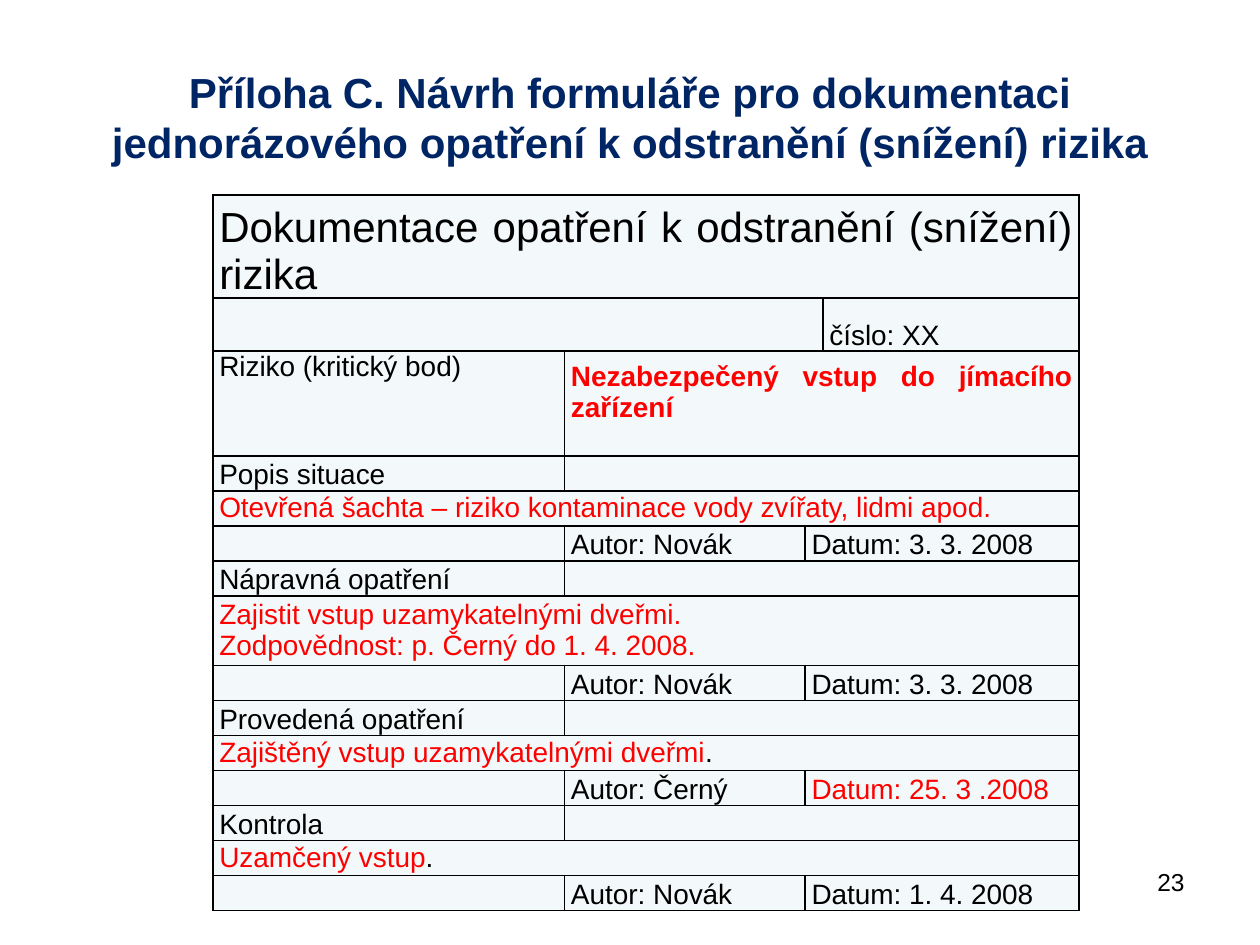
import pptx
import pptx.util
import pptx.dml.color
import pptx.enum.text
from lxml import etree
from pptx.oxml.ns import qn

Cm, Pt = pptx.util.Cm, pptx.util.Pt
RGBColor = pptx.dml.color.RGBColor
ALIGN = pptx.enum.text.PP_ALIGN
ANCHOR = pptx.enum.text.MSO_ANCHOR

NAVY = RGBColor(0x00, 0x25, 0x65)
BLACK = RGBColor(0x00, 0x00, 0x00)
RED = RGBColor(0xFF, 0x00, 0x00)
PALE = RGBColor(0xF3, 0xF9, 0xFA)
FONT = "Arial"

COL_WIDTHS = [7.09, 4.85, 0.3, 5.16]
LINE_HEIGHT = 0.705
ROW_HEIGHTS = [2.08, 1.07, 2.11] + [LINE_HEIGHT] * 4 + [1.41] + [LINE_HEIGHT] * 7


def add_run(p, text, size, color=BLACK, bold=False):
    r = p.add_run()
    r.text = text
    r.font.name = FONT
    r.font.size = Pt(size)
    r.font.bold = bold
    r.font.color.rgb = color


def add_title(sld, text):
    sp = sld.shapes.title
    sp.left, sp.top, sp.width, sp.height = Cm(1.27), Cm(0.76), Cm(22.86), Cm(3.18)
    tf = sp.text_frame
    tf.word_wrap = True
    tf.vertical_anchor = ANCHOR.MIDDLE
    p = tf.paragraphs[0]
    p.alignment = ALIGN.CENTER
    add_run(p, text, 24, NAVY, True)


def add_page_number(sld, text):
    tf = sld.shapes.add_textbox(Cm(18.21), Cm(17.35), Cm(5.92), Cm(1.32)).text_frame
    tf.word_wrap = True
    p = tf.paragraphs[0]
    p.alignment = ALIGN.RIGHT
    add_run(p, text, 14)


def format_cell(cell):
    """Thin black borders, pale fill and tight margins."""
    tc_pr = cell._tc.get_or_add_tcPr()
    for side in ("lnL", "lnR", "lnT", "lnB"):
        ln = etree.SubElement(tc_pr, qn("a:" + side), w=str(Pt(1)))
        fill = etree.SubElement(ln, qn("a:solidFill"))
        etree.SubElement(fill, qn("a:srgbClr"), val=str(BLACK))
    cell.fill.solid()
    cell.fill.fore_color.rgb = PALE
    cell.margin_left = cell.margin_right = Cm(0.13)
    cell.margin_top = cell.margin_bottom = 0


def write_cell(cell, lines, size=16, anchor=ANCHOR.BOTTOM):
    """Each line is a list of (text, color, bold) runs."""
    cell.vertical_anchor = anchor
    tf = cell.text_frame
    for i, runs in enumerate(lines):
        p = tf.add_paragraph() if i else tf.paragraphs[0]
        p.alignment = ALIGN.JUSTIFY
        for run in runs:
            add_run(p, run[0], size, *run[1:])


def write_section(tbl, row, label, note, author, date, date_color=BLACK):
    """Three rows: heading, note across the table, signature."""
    tbl.cell(row, 1).merge(tbl.cell(row, 3))
    write_cell(tbl.cell(row, 0), [[(label,)]])

    tbl.cell(row + 1, 0).merge(tbl.cell(row + 1, 3))
    write_cell(tbl.cell(row + 1, 0), note, anchor=ANCHOR.MIDDLE)

    tbl.cell(row + 2, 2).merge(tbl.cell(row + 2, 3))
    write_cell(tbl.cell(row + 2, 1), [[("Autor: " + author,)]])
    write_cell(tbl.cell(row + 2, 2), [[("Datum: " + date, date_color)]])


def add_form(sld):
    gf = sld.shapes.add_table(len(ROW_HEIGHTS), len(COL_WIDTHS), Cm(4.29), Cm(3.93),
                              Cm(sum(COL_WIDTHS)), Cm(sum(ROW_HEIGHTS)))
    tbl = gf.table
    for col, width in zip(tbl.columns, COL_WIDTHS):
        col.width = Cm(width)
    for row, height in zip(tbl.rows, ROW_HEIGHTS):
        row.height = Cm(height)
    for cell in tbl.iter_cells():
        format_cell(cell)

    # Form heading and number
    tbl.cell(0, 0).merge(tbl.cell(0, 3))
    write_cell(tbl.cell(0, 0), [[("Dokumentace opatření k odstranění (snížení) rizika",)]], 24)
    tbl.cell(1, 0).merge(tbl.cell(1, 2))
    write_cell(tbl.cell(1, 3), [[("číslo: XX",)]])

    # Risk, raised one line above the bottom of its row
    tbl.cell(2, 1).merge(tbl.cell(2, 3))
    write_cell(tbl.cell(2, 0), [[("Riziko (kritický bod)",)]], anchor=ANCHOR.TOP)
    risk = tbl.cell(2, 1)
    risk.margin_bottom = Cm(0.65)
    write_cell(risk, [[("Nezabezpečený vstup do jímacího zařízení", RED, True)]])

    # Sections of the form
    sections = [
        ("Popis situace",
         [[("Otevřená šachta – riziko kontaminace vody zvířaty, lidmi apod.", RED)]],
         "Novák", "3. 3. 2008"),
        ("Nápravná opatření",
         [[("Zajistit vstup uzamykatelnými dveřmi.", RED)],
          [("Zodpovědnost: p. Černý do 1. 4. 2008.", RED)]],
         "Novák", "3. 3. 2008"),
        ("Provedená opatření",
         [[("Zajištěný vstup uzamykatelnými dveřmi", RED), (".",)]],
         "Černý", "25. 3 .2008", RED),
        ("Kontrola", [[("Uzamčený vstup", RED), (".",)]], "Novák", "1. 4. 2008"),
    ]
    for i, section in enumerate(sections):
        write_section(tbl, 3 + 3 * i, *section)

    # Empty cells must not stretch their rows
    for cell in tbl.iter_cells():
        if not cell.text_frame.text:
            p = cell.text_frame.paragraphs[0]
            etree.SubElement(p._p, qn("a:endParaRPr"), sz="1600")


def main():
    prs = pptx.Presentation()
    prs.slide_width, prs.slide_height = Cm(25.4), Cm(19.05)
    sld = prs.slides.add_slide(prs.slide_layouts[5])
    add_title(sld, "Příloha C. Návrh formuláře pro dokumentaci "
                   "jednorázového opatření k odstranění (snížení) rizika")
    add_form(sld)
    add_page_number(sld, "23")
    prs.save("out.pptx")


if __name__ == "__main__":
    main()
